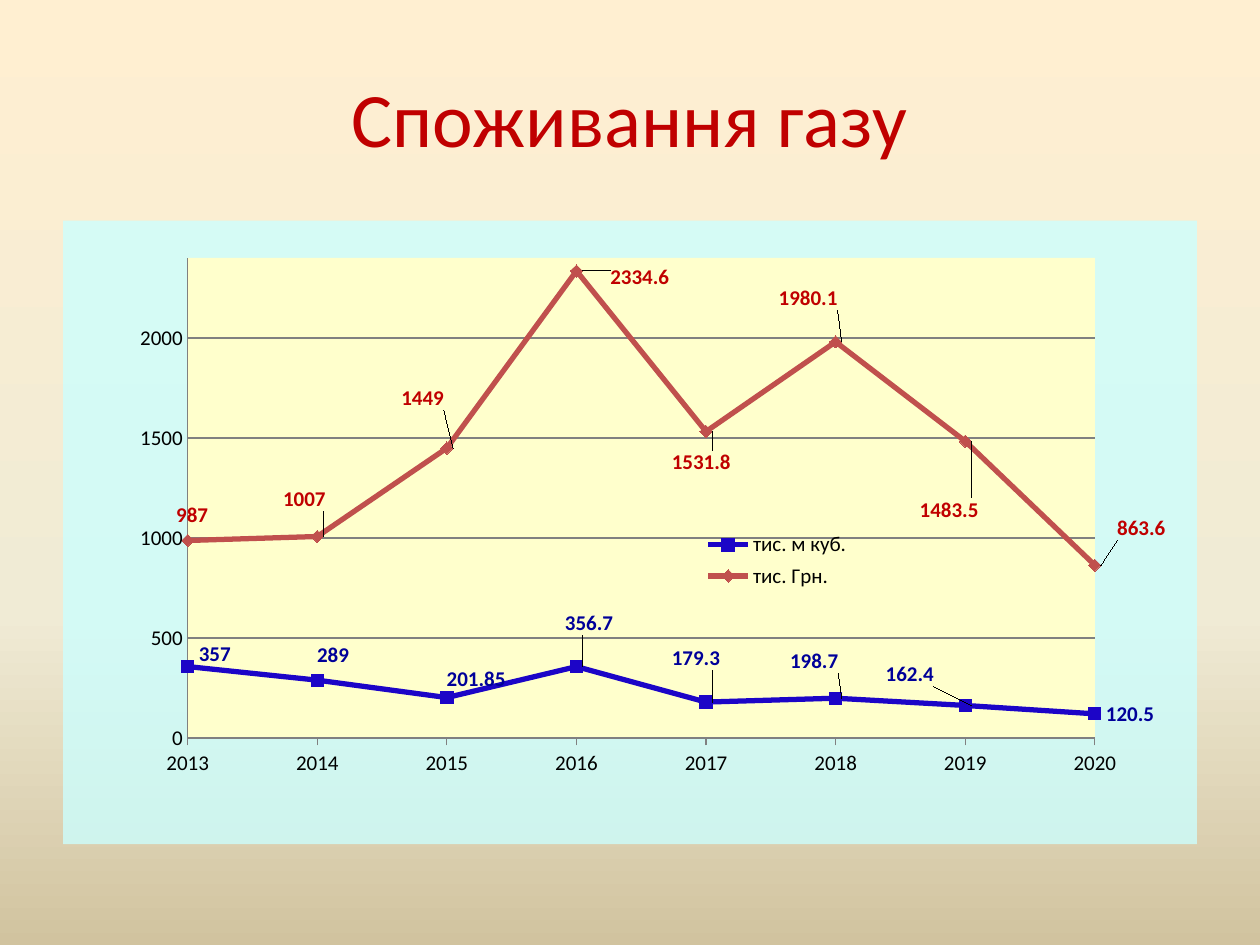
"""Build the gas consumption slide with its two-series line chart."""
from copy import deepcopy
from dataclasses import dataclass

from pptx import Presentation, oxml
from pptx import util as u
from pptx.chart.data import CategoryChartData
from pptx.dml.color import RGBColor
from pptx.enum import chart as kinds, text
from pptx.oxml.ns import nsdecls, qn


@dataclass(frozen=True)
class Theme:
    """Colours, font and type sizes of the slide."""
    font: str = "Calibri"
    title_size: int = 44
    chart_size: int = 12
    title: str = "C00000"
    ink: str = "000000"
    grid: str = "808080"
    chart_fill: str = "CCFFFF"
    plot_fill: str = "FFFFCC"
    backdrop: tuple = ((0, "FFEFD1"), (0.65, "F0EBD5"), (1, "D1C39F"))


@dataclass(frozen=True)
class Measure:
    """One line of the chart, with label shifts as shares of the chart."""
    name: str
    values: tuple
    shifts: tuple
    line: str
    label: str
    marker: object


YEARS = [str(year) for year in range(2013, 2021)]
MEASURES = (
    Measure("тис. м куб.",
            (357, 289, 201.85, 356.7, 179.3, 198.7, 162.4, 120.5),
            ((0, -0.02), (-0.01, -0.04), (-0.01, -0.03), (-0.02, -0.07),
             (-0.04, -0.07), (-0.05, -0.06), (-0.08, -0.05), (0, 0)),
            "1C05C7", "000099", kinds.XL_MARKER_STYLE.SQUARE),
    Measure("тис. Грн.",
            (987, 1007, 1449, 2334.6, 1531.8, 1980.1, 1483.5, 863.6),
            ((-0.02, -0.04), (-0.04, -0.06), (-0.05, -0.08), (0.02, 0.01),
             (-0.04, 0.05), (-0.06, -0.07), (-0.05, 0.11), (0.01, -0.06)),
            "C0504D", "C00000", kinds.XL_MARKER_STYLE.DIAMOND),
)


def rgb(colour):
    """Turn a hex string into a colour."""
    return RGBColor.from_string(colour)


def layout_xml(edge=False, **parts):
    """Make a manual layout from shares of the chart."""
    modes = '<c:xMode val="edge"/><c:yMode val="edge"/>' if edge else ""
    target = '<c:layoutTarget val="inner"/>' if edge == "inner" else ""
    sizes = "".join(f'<c:{key} val="{value}"/>' for key, value in parts.items())
    return oxml.parse_xml(
        f'<c:layout {nsdecls("c")}><c:manualLayout>{target}{modes}{sizes}'
        "</c:manualLayout></c:layout>")


def fill_xml(colour, opacity=100):
    """Make borderless shape properties with a solid fill."""
    return oxml.parse_xml(
        f'<c:spPr {nsdecls("c", "a")}><a:solidFill><a:srgbClr val="{colour}">'
        f'<a:alpha val="{opacity * 1000}"/></a:srgbClr></a:solidFill>'
        "<a:ln><a:noFill/></a:ln></c:spPr>")


def drop(parent, tag):
    """Remove the direct children with this tag."""
    for child in parent.findall(qn(tag)):
        parent.remove(child)


class SlideBuilder:
    """Holds the theme and the current slide."""

    def __init__(self, page, theme):
        self.page = page
        self.theme = theme

    def style(self, font, size, colour, bold=False):
        """Apply the type style to a font."""
        font.name, font.size, font.bold = self.theme.font, u.Pt(size), bold
        font.color.rgb = rgb(colour)

    def background(self):
        """Fill the slide with the vertical gradient."""
        fill = self.page.background.fill
        fill.gradient()
        fill.gradient_angle = 270
        stops = self.page.element.find(".//" + qn("a:gsLst"))
        stops.append(deepcopy(stops[0]))
        for stop, (position, colour) in zip(fill.gradient_stops, self.theme.backdrop):
            stop.position = position
            stop.color.rgb = rgb(colour)

    def title(self, words, left, top, width, height):
        """Add the centred heading."""
        box = self.page.shapes.add_textbox(
            *map(u.Inches, (left, top, width, height)))
        frame = box.text_frame
        frame.word_wrap = True
        frame.vertical_anchor = text.MSO_ANCHOR.MIDDLE
        para = frame.paragraphs[0]
        para.alignment = text.PP_ALIGN.CENTER
        span = para.add_run()
        span.text = words
        self.style(span.font, self.theme.title_size, self.theme.title)

    def line_chart(self, years, measures, left, top, width, height):
        """Add the line chart with markers."""
        data = CategoryChartData()
        data.categories = years
        for measure in measures:
            data.add_series(measure.name, measure.values)
        chart = self.page.shapes.add_chart(
            kinds.XL_CHART_TYPE.LINE_MARKERS,
            *map(u.Inches, (left, top, width, height)), data).chart
        chart.has_title = False
        self.style(chart.font, self.theme.chart_size, self.theme.ink)
        chart.plots[0].vary_by_categories = False
        for series, measure in zip(chart.plots[0].series, measures):
            self.line(series, measure)
        self.axes(chart)
        self.legend(chart)
        self.areas(chart)

    def line(self, series, measure):
        """Style one series and place its labels."""
        series.smooth = False
        series.format.line.width = u.Pt(3)
        series.format.line.color.rgb = rgb(measure.line)
        series.marker.style = measure.marker
        series.marker.size = 7
        series.marker.format.fill.solid()
        series.marker.format.fill.fore_color.rgb = rgb(measure.line)
        series.marker.format.line.color.rgb = rgb(measure.line)
        labels = series.data_labels
        labels.show_value = True
        labels.position = kinds.XL_LABEL_POSITION.RIGHT
        self.style(labels.font, self.theme.chart_size, measure.label, True)
        for index, (x, y) in enumerate(measure.shifts):
            label = series.points[index].data_label
            self.style(label.font, self.theme.chart_size, measure.label, True)
            label.position = kinds.XL_LABEL_POSITION.RIGHT
        for node, (x, y) in zip(series.data_labels._element.findall(qn("c:dLbl")),
                                measure.shifts):
            node.find(qn("c:idx")).addnext(layout_xml(x=x, y=y))

    def axes(self, chart):
        """Set scale, ticks and gridlines."""
        years, amounts = chart.category_axis, chart.value_axis
        years.major_tick_mark = kinds.XL_TICK_MARK.OUTSIDE
        amounts.major_tick_mark = kinds.XL_TICK_MARK.NONE
        amounts.minimum_scale, amounts.maximum_scale = 0, 2400
        amounts.major_unit = 500
        amounts.has_major_gridlines = True
        for line in (years.format.line, amounts.format.line,
                     amounts.major_gridlines.format.line):
            line.width = u.Pt(0.75)
            line.color.rgb = rgb(self.theme.grid)
        for axis in (years, amounts):
            self.style(axis.tick_labels.font, self.theme.chart_size, self.theme.ink)
        node = amounts._element
        drop(node, "c:crossBetween")
        node.find(qn("c:crosses")).addnext(oxml.parse_xml(
            f'<c:crossBetween {nsdecls("c")} val="midCat"/>'))

    def legend(self, chart):
        """Place the legend over the plot."""
        chart.has_legend = True
        legend = chart.legend
        legend.position = kinds.XL_LEGEND_POSITION.RIGHT
        legend.include_in_layout = False
        self.style(legend.font, self.theme.chart_size, self.theme.ink)
        node = legend._element
        drop(node, "c:layout")
        node.find(qn("c:legendPos")).addnext(
            layout_xml(True, x=0.56, y=0.49, w=0.14, h=0.11))

    def areas(self, chart):
        """Fill the chart and place the plot inside it."""
        root = chart.element
        root.find(qn("c:chart")).addnext(fill_xml(self.theme.chart_fill, 78))
        plot = root.find(".//" + qn("c:plotArea"))
        drop(plot, "c:layout")
        plot.insert(0, layout_xml("inner", x=0.11, y=0.06, w=0.8, h=0.77))
        plot.append(fill_xml(self.theme.plot_fill))


def main():
    """Build and save the deck."""
    deck = Presentation()
    deck.slide_width, deck.slide_height = u.Inches(10), u.Inches(7.5)
    builder = SlideBuilder(deck.slides.add_slide(deck.slide_layouts[6]), Theme())
    builder.background()
    builder.title("Споживання газу", 0.5, 0.3, 9, 1.25)
    builder.line_chart(YEARS, MEASURES, 0.5, 1.75, 9, 4.95)
    deck.save("out.pptx")


if __name__ == "__main__":
    main()
